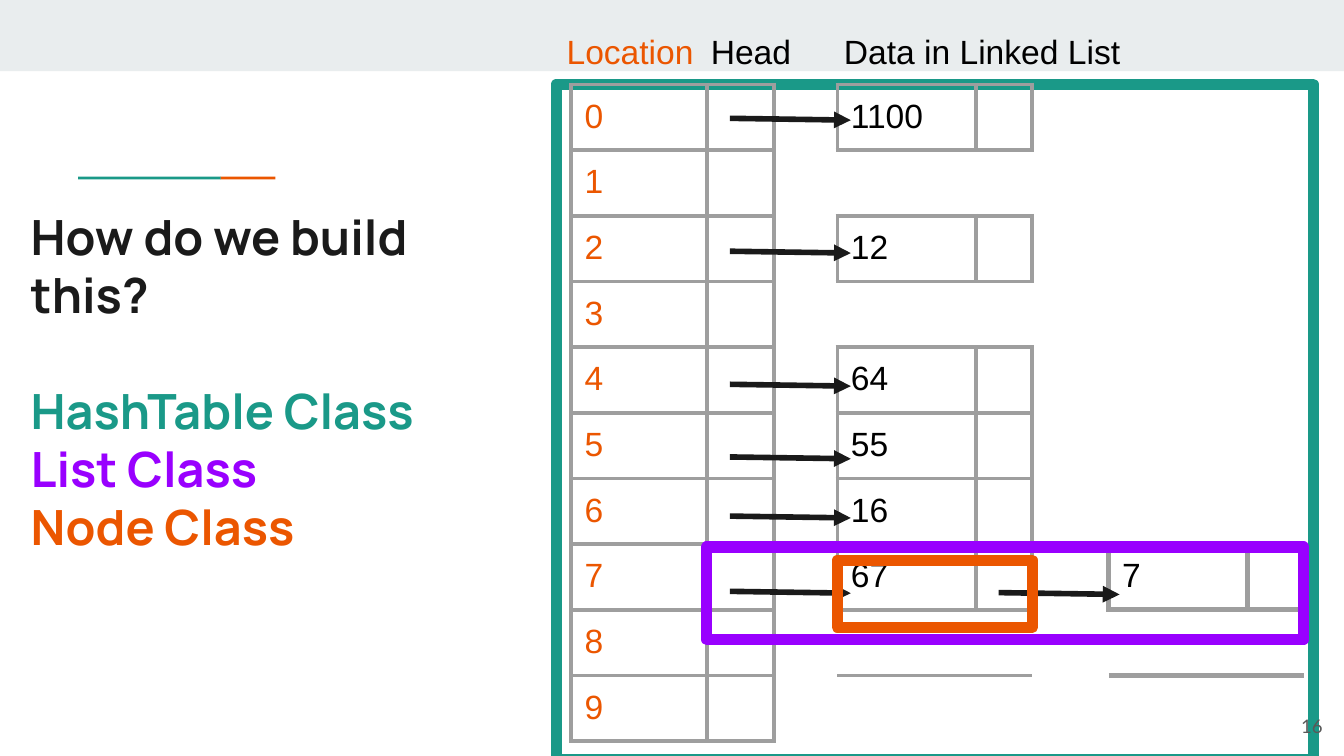
from lxml.etree import SubElement
from pptx import Presentation
from pptx.dml.color import RGBColor
from pptx.enum.shapes import MSO_CONNECTOR as Connector, MSO_SHAPE as Shape
from pptx.enum.text import MSO_ANCHOR as Anchor, PP_ALIGN as Align
from pptx.oxml.ns import qn
from pptx.util import Pt

TEAL, ORANGE, PURPLE = "1A9988", "EB5600", "9900FF"
INK, BLACK, GRID, BAND, MUTED = "1A1A1A", "000000", "9E9E9E", "E9EDEE", "595959"
NO_STYLE = "{2D5ABB26-0587-4C30-8999-92F81FD0307C}"
INSET = 7.2
TABLE_TOP, ROW_HEIGHT = 45.2, 35.2


def color(value):
    return RGBColor.from_string(value)


def format_paragraph(paragraph, size, font, fill, bold=False):
    for run in paragraph.runs:
        run.font.size = Pt(size)
        run.font.name = font
        run.font.bold = bold
        run.font.color.rgb = color(fill)


def add_block(slide, left, top, width, height, fill):
    shape = slide.shapes.add_shape(
        Shape.RECTANGLE, Pt(left), Pt(top), Pt(width), Pt(height))
    shape.shadow.inherit = False
    shape.fill.solid()
    shape.fill.fore_color.rgb = color(fill)
    shape.line.fill.background()


def add_frame(slide, left, top, width, height, line):
    shape = slide.shapes.add_shape(
        Shape.RECTANGLE, Pt(left), Pt(top), Pt(width), Pt(height))
    shape.shadow.inherit = False
    shape.fill.background()
    shape.line.color.rgb = color(line)
    shape.line.width = Pt(6)
    SubElement(shape.line._get_or_add_ln(), qn("a:round"))


def add_text(slide, left, top, width, height, text, size, font, fill,
             align=Align.LEFT, anchor=Anchor.TOP, bold=False):
    frame = slide.shapes.add_textbox(
        Pt(left), Pt(top), Pt(width), Pt(height)).text_frame
    frame.word_wrap = True
    frame.vertical_anchor = anchor
    frame.margin_left = frame.margin_right = Pt(INSET)
    frame.margin_top = frame.margin_bottom = Pt(INSET)
    frame.text = text
    for paragraph in frame.paragraphs:
        paragraph.alignment = align
        format_paragraph(paragraph, size, font, fill, bold)
    return frame


def add_arrow(slide, left, top, length=64.8, drop=1):
    arrow = slide.shapes.add_connector(
        Connector.STRAIGHT, Pt(left), Pt(top), Pt(left + length), Pt(top + drop))
    arrow.line.color.rgb = color(INK)
    arrow.line.width = Pt(3)
    SubElement(arrow.line._get_or_add_ln(), qn("a:tailEnd"), type="triangle")
    SubElement(arrow._element.spPr, qn("a:effectLst"))


def set_borders(cell, sides, width):
    properties = cell._tc.get_or_add_tcPr()
    for side in sides:
        line = SubElement(properties, qn("a:ln" + side), w=str(Pt(width)))
        fill = SubElement(line, qn("a:solidFill"))
        SubElement(fill, qn("a:srgbClr"), val=GRID)


def add_list_table(slide, left, widths, labels, fill, border):
    """Draw a two-column table; only labelled rows are boxed."""
    rows = len(labels)
    table = slide.shapes.add_table(
        rows, 2, Pt(left), Pt(TABLE_TOP),
        Pt(sum(widths)), Pt(ROW_HEIGHT * rows)).table
    table.first_row = table.horz_banding = False
    table._tbl.tblPr.find(qn("a:tableStyleId")).text = NO_STYLE
    for column, width in zip(table.columns, widths):
        column.width = Pt(width)
    for index, label in enumerate(labels):
        table.rows[index].height = Pt(ROW_HEIGHT)
        above = index > 0 and labels[index - 1]
        below = index < rows - 1 and labels[index + 1]
        sides = ["L", "R"] if label else []
        sides += ["T"] if label or above else []
        sides += ["B"] if label or below else []
        for column in range(2):
            cell = table.cell(index, column)
            set_borders(cell, sides, border)
            cell.fill.background()
        if label:
            cell = table.cell(index, 0)
            cell.margin_left = cell.margin_right = Pt(INSET)
            cell.margin_top = cell.margin_bottom = Pt(INSET)
            cell.text_frame.text = label
            format_paragraph(cell.text_frame.paragraphs[0], 18, "Arial", fill)


def add_title(slide):
    lines = [("How do we build this?", INK), ("HashTable Class", TEAL),
             ("List Class", PURPLE), ("Node Class", ORANGE)]
    frame = add_text(slide, 9.4, 103.7, 274, 200,
                     "\n".join(text for text, _ in lines),
                     26, "Manrope", INK, bold=True)
    for paragraph, (_, fill) in zip(frame.paragraphs, lines):
        paragraph.line_spacing = Pt(31.1)
        format_paragraph(paragraph, 26, "Manrope", fill, bold=True)
    frame.paragraphs[1].space_before = Pt(31.1)


def main():
    presentation = Presentation()
    presentation.slide_width, presentation.slide_height = Pt(720), Pt(405)
    slide = presentation.slides.add_slide(presentation.slide_layouts[6])

    # Top band and two-colour rule
    add_block(slide, 0, 0, 720, 38.2, BAND)
    add_block(slide, 118, 94.6, 29.5, 1.6, ORANGE)
    add_block(slide, 41.8, 94.6, 76.4, 1.6, TEAL)

    # Hash table frame and its lists
    add_frame(slide, 298, 45.2, 405.5, 361.5, TEAL)
    node_widths = (74.2, 30.2)
    second_nodes = [""] * 7 + ["7", "", ""]
    first_nodes = ["1100", "", "12", "", "64", "55", "16", "67", "", ""]
    locations = [str(number) for number in range(10)]
    add_list_table(slide, 594, node_widths, second_nodes, BLACK, 3)
    add_list_table(slide, 306, (72.7, 36), locations, ORANGE, 2.25)
    add_list_table(slide, 448.6, node_widths, first_nodes, BLACK, 2.25)

    # List frame, title and column headings
    add_frame(slide, 378.7, 293, 319.7, 49.7, PURPLE)
    add_title(slide)
    for left, width, text, fill, align in [
            (294.5, 84.2, "Location", ORANGE, Align.RIGHT),
            (373.7, 71.3, "Head", BLACK, Align.LEFT),
            (445, 197.3, "Data in Linked List", BLACK, Align.LEFT)]:
        add_text(slide, left, 9.4, width, 26.6, text, 18, "Arial", fill, align)

    # Pointers from heads to nodes, then node to node
    for top in (63.4, 134.6, 205.9, 244.8, 276.5, 316.8):
        add_arrow(slide, 391, top)
    add_arrow(slide, 535, 317.5)

    # Node frame and page number
    add_frame(slide, 448.6, 300.2, 104.4, 36, ORANGE)
    add_text(slide, 672.5, 373.7, 43.2, 31, "16", 10, "Lato", MUTED,
             Align.RIGHT, Anchor.MIDDLE)

    presentation.save("out.pptx")


if __name__ == "__main__":
    main()
